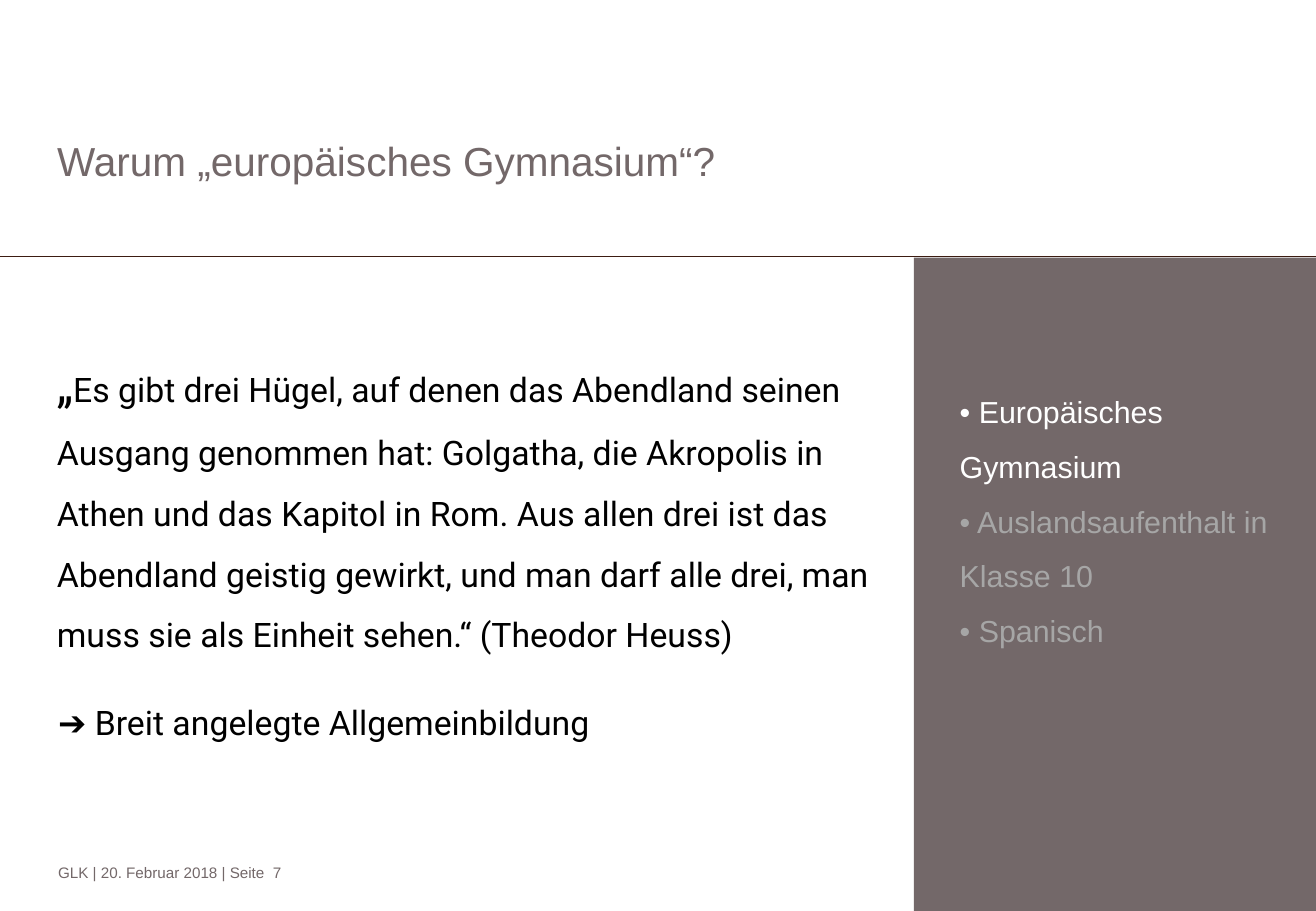
from dataclasses import dataclass

from pptx import Presentation
from pptx.dml.color import RGBColor
from pptx.enum.shapes import MSO_CONNECTOR as Connector, MSO_SHAPE as Shape
from pptx.enum.text import MSO_ANCHOR as Anchor, MSO_AUTO_SIZE as AutoSize, PP_ALIGN as Align
from pptx.oxml.ns import qn
from pptx.util import Inches, Pt


@dataclass(frozen=True)
class Theme:
    sans: str = "Arial"
    quote_font: str = "Roboto"
    taupe: str = "736869"
    rule: str = "3C1C12"
    black: str = "000000"
    active: str = "FFFFFF"
    muted: str = "A6A6A6"
    title_size: int = 24
    quote_mark_size: int = 28
    quote_size: int = 20
    agenda_size: int = 18
    footer_size: int = 9


THEME = Theme()
SLIDE_WIDTH, SLIDE_HEIGHT = 10.83, 7.5
RULE_TOP = 2.11
PANEL_LEFT, PANEL_TOP = 7.52, 2.12

QUOTE = (
    "Es gibt drei Hügel, auf denen das Abendland seinen Ausgang genommen hat: "
    "Golgatha, die Akropolis in Athen und das Kapitol in Rom. Aus allen drei ist "
    "das Abendland geistig gewirkt, und man darf alle drei, man muss sie als "
    "Einheit sehen.“ (Theodor Heuss)"
)
AGENDA = [
    ("• Europäisches Gymnasium", THEME.active),
    ("• Auslandsaufenthalt in Klasse 10", THEME.muted),
    ("• Spanisch", THEME.muted),
]


def style(font, name, size, color):
    font.name = name
    font.size = Pt(size)
    font.color.rgb = RGBColor.from_string(color)


def add_title(slide, text):
    title = slide.shapes.title
    title.left, title.top = Inches(0.37), Inches(1.07)
    title.width, title.height = Inches(7.56), Inches(0.51)
    frame = title.text_frame
    frame.text = text
    frame.vertical_anchor = Anchor.TOP
    frame.auto_size = AutoSize.NONE
    heading = frame.paragraphs[0]
    heading.alignment = Align.LEFT
    style(heading.font, THEME.sans, THEME.title_size, THEME.taupe)


def add_text(slide, left, top, width, height, lines, font, size, spacing=1.0):
    frame = slide.shapes.add_textbox(
        Inches(left), Inches(top), Inches(width), Inches(height)
    ).text_frame
    frame.word_wrap = True
    for index, (text, color) in enumerate(lines):
        line = frame.add_paragraph() if index else frame.paragraphs[0]
        line.line_spacing = spacing
        line.add_run().text = text
        style(line.font, font, size, color)
    return frame


def add_quote(slide):
    frame = add_text(slide, 0.37, 2.64, 7.1, 2.77, [("„", THEME.black)],
                     THEME.quote_font, THEME.quote_size, 1.5)
    quote = frame.paragraphs[0]
    quote.runs[0].font.size = Pt(THEME.quote_mark_size)
    quote.add_run().text = QUOTE


def add_panel(slide):
    panel = slide.shapes.add_shape(
        Shape.RECTANGLE, Inches(PANEL_LEFT), Inches(PANEL_TOP),
        Inches(SLIDE_WIDTH - PANEL_LEFT), Inches(SLIDE_HEIGHT - PANEL_TOP),
    )
    panel.shadow.inherit = False
    panel.fill.solid()
    panel.fill.fore_color.rgb = RGBColor.from_string(THEME.taupe)
    panel.line.fill.background()


def add_rule(slide):
    rule = slide.shapes.add_connector(
        Connector.STRAIGHT, Inches(0), Inches(RULE_TOP), Inches(SLIDE_WIDTH), Inches(RULE_TOP)
    )
    rule.line.color.rgb = RGBColor.from_string(THEME.rule)
    rule.line.width = Pt(0.75)
    properties = rule._element.spPr
    properties.append(properties.makeelement(qn("a:effectLst"), {}))


def main():
    deck = Presentation()
    deck.slide_width, deck.slide_height = Inches(SLIDE_WIDTH), Inches(SLIDE_HEIGHT)
    slide = deck.slides.add_slide(deck.slide_layouts.get_by_name("Title Only"))

    add_title(slide, "Warum „europäisches Gymnasium“?")
    add_panel(slide)
    add_text(slide, 7.8, 3.04, 3.04, 2.37, AGENDA, THEME.sans, THEME.agenda_size, 1.5)
    add_rule(slide)
    add_text(slide, 0.38, 7.06, 4.02, 0.25,
             [("GLK | 20. Februar 2018 | Seite  7", THEME.taupe)],
             THEME.sans, THEME.footer_size)
    add_quote(slide)
    add_text(slide, 0.38, 5.56, 7.1, 0.54,
             [("➔ Breit angelegte Allgemeinbildung", THEME.black)],
             THEME.quote_font, THEME.quote_size, 1.5)

    deck.save("out.pptx")


if __name__ == "__main__":
    main()
